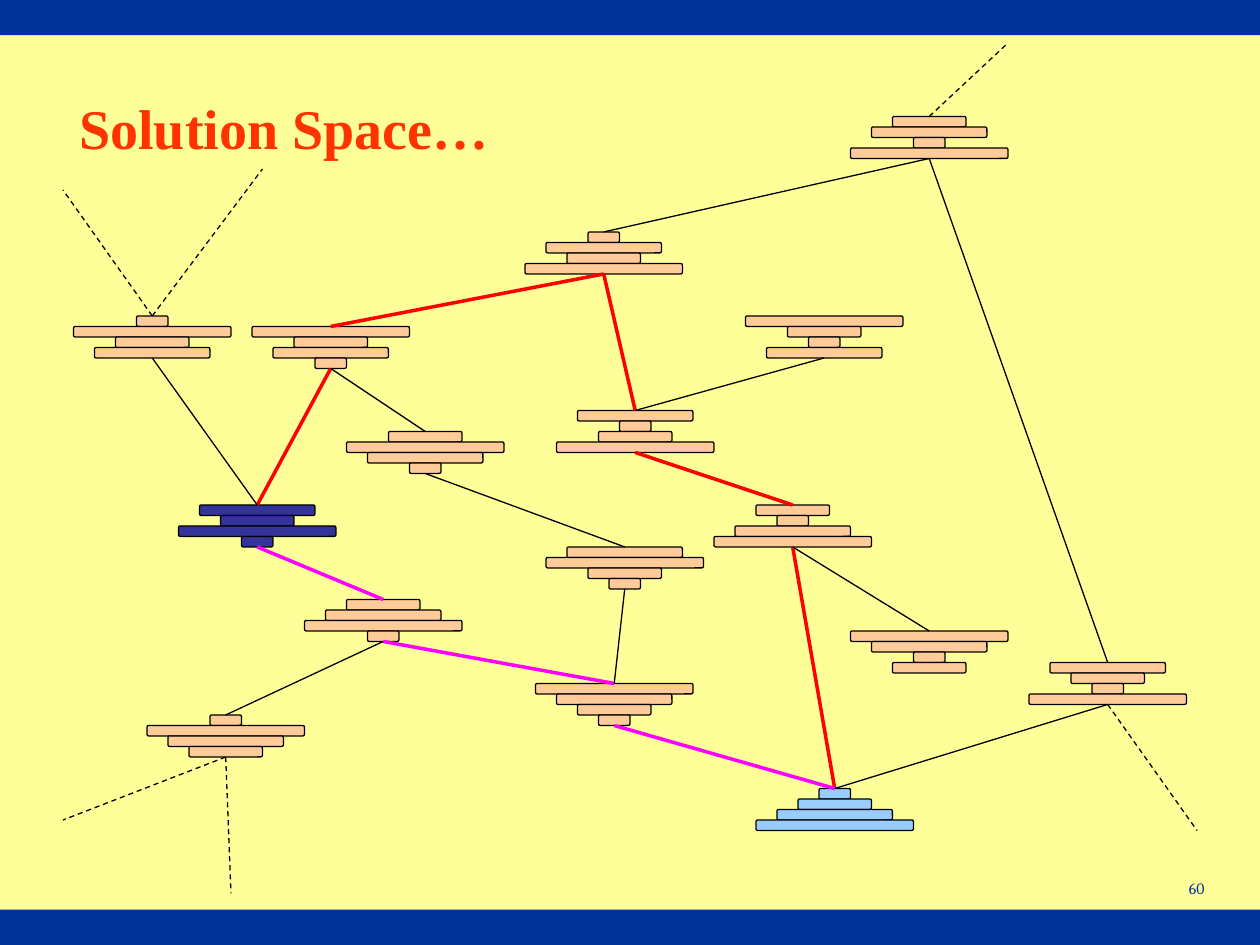
from lxml.etree import SubElement
from pptx import Presentation
from pptx.dml.color import RGBColor
from pptx.enum.dml import MSO_LINE
from pptx.enum.shapes import MSO_CONNECTOR, MSO_SHAPE
from pptx.enum.text import MSO_ANCHOR, PP_ALIGN
from pptx.oxml.ns import qn
from pptx.util import Cm, Pt

WIDTH, HEIGHT = 25.4, 19.05
BAR_HEIGHT = 0.71
UNIT = 2.54 / 12  # disc height, and the step of the grid
TOP_OFFSET = 0.02

PAPER, NAVY, TITLE_RED = "FFFF99", "003399", "FF3300"
PEACH, START_BLUE, GOAL_BLUE = "FFCC99", "333399", "99CCFF"
BLACK, RED, MAGENTA = "000000", "FF0000", "FF00FF"

# Discs from top to bottom (4 is the widest): centre column and top row
STATES = {
    "3241": (24.5, 48), "4231": (31.5, 31), "1324": (57.5, 22),
    "3124": (60.5, 39), "2134": (75.5, 48), "1234": (79.5, 75),
    "2341": (36.5, 57), "4321": (58.5, 65), "1423": (14.5, 30),
    "2314": (88.5, 11), "2431": (40.5, 41), "4213": (78.5, 30),
    "4312": (88.5, 60), "1432": (21.5, 68), "3421": (59.5, 52),
    "3214": (105.5, 63),
}
START, GOAL = "3241", "1234"
STATE_COLORS = {START: START_BLUE, GOAL: GOAL_BLUE}

# Each move joins the foot of the upper state to the top of the lower one
MOVES = [
    (RED, 2, [("4231", START), ("1324", "4231"), ("1324", "3124"),
              ("3124", "2134"), ("2134", GOAL)]),
    (MAGENTA, 2, [(START, "2341"), ("2341", "4321"), ("4321", GOAL)]),
    (BLACK, 0.75, [("1423", START), ("2314", "1324"), ("4231", "2431"),
                   ("4213", "3124"), ("2134", "4312"), ("2341", "1432"),
                   ("3421", "4321"), ("3214", GOAL), ("2431", "3421"),
                   ("2314", "3214")]),
]
UNEXPLORED_ABOVE = [("1423", (6, 18)), ("1423", (25, 16)), ("2314", (96, 4))]
UNEXPLORED_BELOW = [("1432", (22, 85)), ("1432", (6, 78)), ("3214", (114, 79))]


def rgb(value):
    return RGBColor.from_string(value)


def top_of(state):
    return STATES[state]


def foot_of(state):
    column, row = STATES[state]
    return column, row + len(state)


def on_grid(point):
    """Turn a (column, row) pair into slide lengths."""
    column, row = point
    return Cm(column * UNIT), Cm(row * UNIT + TOP_OFFSET)


class SlideBuilder:
    def __init__(self, slide):
        self.slide = slide
        self.shapes = slide.shapes

    def background(self, color):
        fill = self.slide.background.fill
        fill.solid()
        fill.fore_color.rgb = rgb(color)

    def bar(self, top):
        bar = self.shapes.add_shape(MSO_SHAPE.RECTANGLE, 0, Cm(top),
                                    Cm(WIDTH), Cm(BAR_HEIGHT))
        bar.shadow.inherit = False
        bar.fill.solid()
        bar.fill.fore_color.rgb = rgb(NAVY)
        bar.line.fill.background()

    def text(self, words, box, size, font, color, bold=False,
             align=PP_ALIGN.LEFT, anchor=MSO_ANCHOR.TOP):
        frame = self.shapes.add_textbox(*map(Cm, box)).text_frame
        frame.word_wrap = True
        frame.vertical_anchor = anchor
        paragraph = frame.paragraphs[0]
        paragraph.alignment = align
        run = paragraph.add_run()
        run.text = words
        run.font.size, run.font.name, run.font.bold = Pt(size), font, bold
        run.font.color.rgb = rgb(color)

    def tower(self, state, color):
        column, row = STATES[state]
        tower = self.shapes.add_group_shape()
        for level, size in enumerate(map(int, state)):
            width = 4 * size - 1
            left, top = on_grid((column - width / 2, row + level))
            disc = tower.shapes.add_shape(MSO_SHAPE.ROUNDED_RECTANGLE, left, top,
                                          Cm(width * UNIT), Cm(UNIT))
            disc.shadow.inherit = False
            disc.fill.solid()
            disc.fill.fore_color.rgb = rgb(color)
            disc.line.color.rgb = rgb(BLACK)
            disc.line.width = Pt(0.75)

    def link(self, begin, end, color=BLACK, width=0.75, dashed=False):
        link = self.shapes.add_connector(MSO_CONNECTOR.STRAIGHT,
                                         *on_grid(begin), *on_grid(end))
        link.line.color.rgb = rgb(color)
        link.line.width = Pt(width)
        if dashed:
            link.line.dash_style = MSO_LINE.DASH
        SubElement(link._element.spPr, qn("a:effectLst"))


def main():
    deck = Presentation()
    deck.slide_width, deck.slide_height = Cm(WIDTH), Cm(HEIGHT)
    builder = SlideBuilder(deck.slides.add_slide(deck.slide_layouts[6]))

    builder.background(PAPER)
    for top in (HEIGHT - BAR_HEIGHT, 0):
        builder.bar(top)
    builder.text("60", (19.25, 17.6, 5.28, 1.27), 9, "Cambria", NAVY,
                 align=PP_ALIGN.RIGHT)

    for state in STATES:
        builder.tower(state, STATE_COLORS.get(state, PEACH))
    for color, width, moves in MOVES:
        for upper, lower in moves:
            builder.link(foot_of(upper), top_of(lower), color, width)
    for state, end in UNEXPLORED_ABOVE:
        builder.link(top_of(state), end, dashed=True)
    for state, end in UNEXPLORED_BELOW:
        builder.link(foot_of(state), end, dashed=True)

    builder.text("Solution Space…", (1.35, 1.4, 18.11, 2.34), 32,
                 "Times New Roman", TITLE_RED, bold=True,
                 anchor=MSO_ANCHOR.MIDDLE)
    deck.save("out.pptx")


if __name__ == "__main__":
    main()
